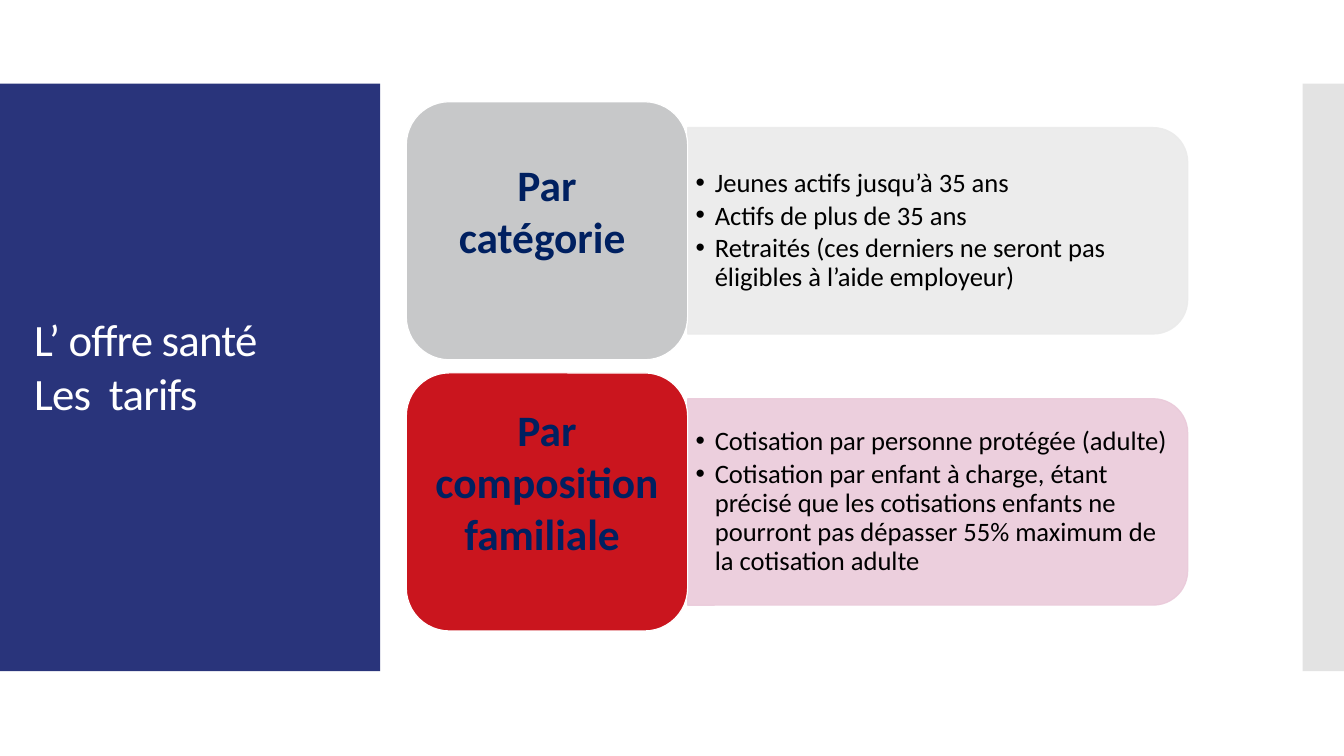
from dataclasses import dataclass

from lxml.etree import SubElement
from pptx import Presentation
from pptx.dml.color import RGBColor
from pptx.enum.shapes import MSO_SHAPE
from pptx.enum.text import MSO_ANCHOR, PP_ALIGN
from pptx.oxml.ns import qn
from pptx.util import Inches, Pt


@dataclass(frozen=True)
class Theme:
    font: str = "Calibri"
    navy: str = "29347B"
    white: str = "FFFFFF"
    edge: str = "C8C8C8"
    ink: str = "000000"
    label: str = "002060"
    title_size: int = 32
    label_size: int = 31
    bullet_size: int = 19
    outline: float = 0.85


THEME = Theme()
WIDTH, HEIGHT = 13.33, 7.5
BAND_TOP, BAND_HEIGHT = 0.83, 5.83
ROW_TOP, ROW_PITCH, ROW_HEIGHT = 1.01, 2.69, 2.56
ROW_LEFT, ROW_WIDTH = 4.03, 7.75
LABEL_SHARE, PANEL_SHARE = 0.36, 0.8

ROWS = [
    ("Par catégorie ", "C7C8C9", "EBEBEB", [
        "Jeunes actifs jusqu’à 35 ans",
        "Actifs de plus de 35 ans",
        "Retraités (ces derniers ne seront pas éligibles à l’aide employeur)",
    ]),
    ("Par composition familiale ", "CA151E", "EACADA", [
        "Cotisation par personne protégée (adulte)",
        "Cotisation par enfant à charge, étant précisé que les cotisations "
        "enfants ne pourront pas dépasser 55% maximum de la cotisation adulte",
    ]),
]


def set_all(target, values):
    for name, value in values.items():
        setattr(target, name, value)


def paint(fill, color, opacity):
    fill.solid()
    fill.fore_color.rgb = RGBColor.from_string(color)
    if opacity < 100:
        for tone in fill._xPr.iter(qn("a:srgbClr")):
            SubElement(tone, qn("a:alpha"), val=str(opacity * 1000))


def add_block(page, kind, box, color, line=None, opacity=100):
    block = page.shapes.add_shape(kind, *map(Inches, box))
    block.shadow.inherit = False
    paint(block.fill, color, opacity)
    if line:
        block.line.width = Pt(THEME.outline)
        paint(block.line.fill, line, opacity)
    else:
        block.line.fill.background()
    return block


def write(frame, lines, size, color, insets, anchor, bold=False, **layout):
    sides = ("margin_left", "margin_top", "margin_right", "margin_bottom")
    set_all(frame, dict(zip(sides, map(Inches, insets))))
    set_all(frame, {"word_wrap": True, "vertical_anchor": anchor})
    for index, line in enumerate(lines):
        para = frame.paragraphs[0] if index == 0 else frame.add_paragraph()
        set_all(para, {"alignment": PP_ALIGN.LEFT, **layout})
        span = para.add_run()
        span.text = line
        set_all(span.font, {"name": THEME.font, "size": Pt(size), "bold": bold})
        span.font.color.rgb = RGBColor.from_string(color)
    return frame.paragraphs


def add_bullet(para):
    properties = para._p.get_or_add_pPr()
    indent = Inches(0.19)
    properties.set("marL", str(indent))
    properties.set("indent", str(-indent))
    SubElement(properties, qn("a:buFont"), typeface="Arial")
    SubElement(properties, qn("a:buChar"), char="•")


def add_title_band(page, left, top, width, height):
    add_block(page, MSO_SHAPE.RECTANGLE, (left, top, width, height), THEME.navy)
    title = add_block(page, MSO_SHAPE.RECTANGLE,
                      (left + 0.24, top + 1.87, width - 0.48, 1.51), THEME.navy)
    paras = write(title.text_frame, ["L’ offre santé", "Les  tarifs"],
                  THEME.title_size, THEME.white, (0.1, 0.39, 0.1, 0.05),
                  MSO_ANCHOR.TOP)
    for para in paras:
        for span in para.runs:
            span.font._element.set("spc", "-60")


def add_row(page, left, top, width, height, row):
    label, label_color, panel_color, bullets = row
    label_width = width * LABEL_SHARE
    panel_left, panel_width = left + label_width, width - label_width
    panel_height = height * PANEL_SHARE
    center_x, center_y = panel_left + panel_width / 2, top + height / 2
    panel = add_block(
        page, MSO_SHAPE.ROUND_2_SAME_RECTANGLE,
        (center_x - panel_height / 2, center_y - panel_width / 2,
         panel_height, panel_width),
        panel_color, panel_color, 90)
    panel.rotation = 90

    details = page.shapes.add_textbox(*map(Inches, (
        panel_left, center_y - panel_height / 2, panel_width - 0.1, panel_height)))
    paras = write(details.text_frame, bullets, THEME.bullet_size, THEME.ink,
                  (0.08, 0.04, 0.08, 0.04), MSO_ANCHOR.MIDDLE,
                  line_spacing=0.9, space_after=Pt(3))
    for para in paras:
        add_bullet(para)

    tile = add_block(page, MSO_SHAPE.ROUNDED_RECTANGLE,
                     (left, top, label_width, height), label_color, THEME.white)
    write(tile.text_frame, [label], THEME.label_size, THEME.label,
          (0.13, 0.06, 0.13, 0.47), MSO_ANCHOR.MIDDLE, bold=True,
          alignment=PP_ALIGN.CENTER)


def main():
    deck = Presentation()
    set_all(deck, {"slide_width": Inches(WIDTH), "slide_height": Inches(HEIGHT)})
    page = deck.slides.add_slide(deck.slide_layouts[6])
    add_title_band(page, 0, BAND_TOP, 3.77, BAND_HEIGHT)
    add_block(page, MSO_SHAPE.RECTANGLE,
              (WIDTH - 0.41, BAND_TOP, 0.41, BAND_HEIGHT), THEME.edge, opacity=50)
    for index, row in enumerate(ROWS):
        add_row(page, ROW_LEFT, ROW_TOP + index * ROW_PITCH,
                ROW_WIDTH, ROW_HEIGHT, row)
    deck.save("out.pptx")


if __name__ == "__main__":
    main()
